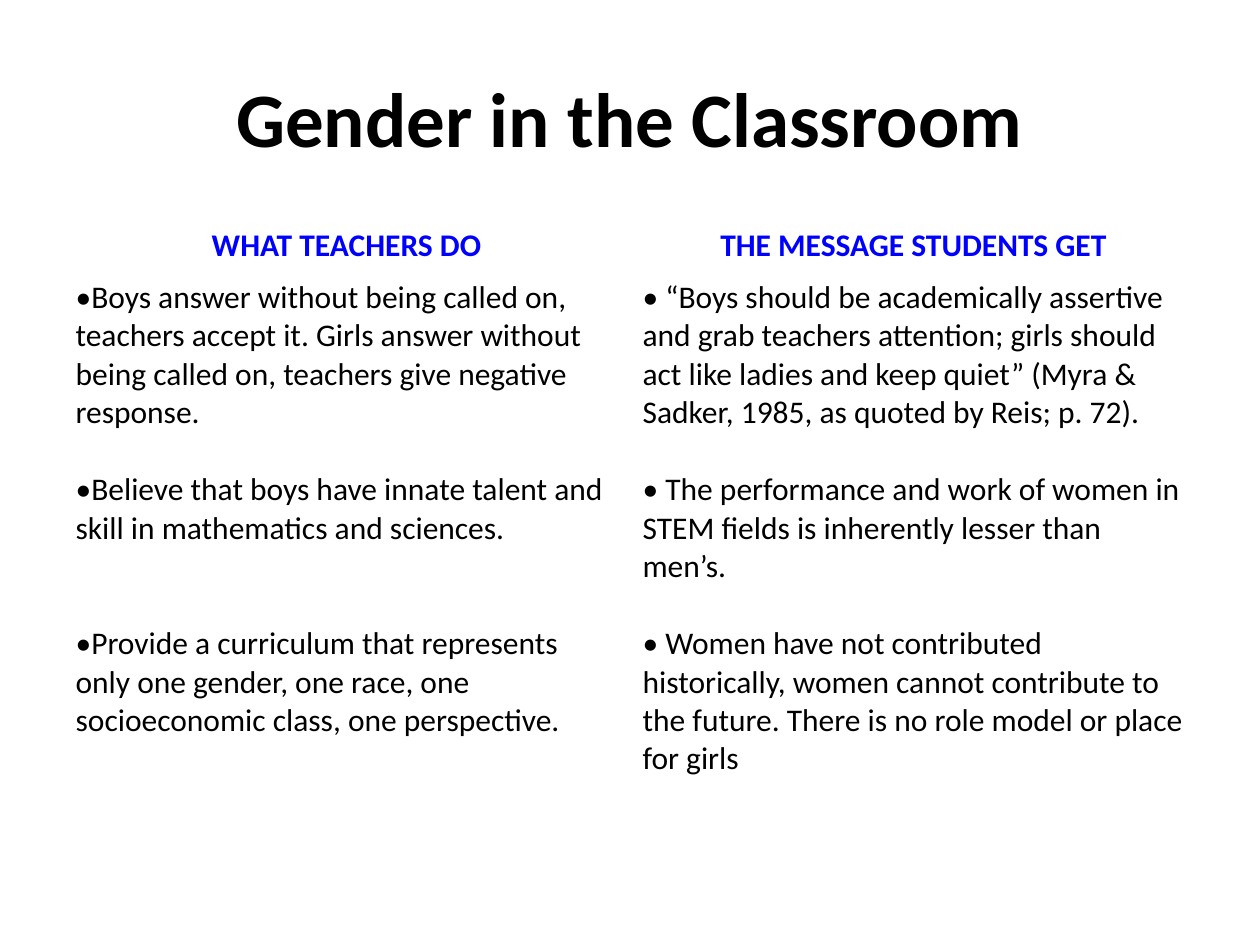
from pptx import Presentation
from pptx.dml.color import RGBColor
from pptx.enum.text import MSO_ANCHOR, PP_ALIGN
from pptx.util import Inches, Pt

LINE = 22  # height of one 18 pt line, in points

HEADINGS = ["WHAT TEACHERS DO", "THE MESSAGE STUDENTS GET"]

# Per column: (text, blank lines above)
POINTS = [
    [
        ("•Boys answer without being called on, teachers accept it. Girls answer "
         "without being called on, teachers give negative response.", 0),
        ("•Believe that boys have innate talent and skill in mathematics and "
         "sciences.", 1),
        ("•Provide a curriculum that represents only one gender, one race, one "
         "socioeconomic class, one perspective.", 2),
    ],
    [
        ("• “Boys should be academically assertive and grab teachers attention; "
         "girls should act like ladies and keep quiet” (Myra & Sadker, 1985, as "
         "quoted by Reis; p. 72).", 0),
        ("• The performance and work of women in STEM fields is inherently lesser "
         "than men’s.", 1),
        ("• Women have not contributed historically, women cannot contribute to "
         "the future. There is no role model or place for girls", 1),
    ],
]


def colour(hex_value):
    return RGBColor.from_string(hex_value)


class SlideBuilder:
    FORMATS = {
        "title": {"name": "Calibri", "size": Pt(44), "bold": True},
        "heading": {"name": "Calibri", "size": Pt(18), "bold": True},
        "point": {"name": "Calibri", "size": Pt(18), "bold": False},
    }
    COLOURS = {"title": "000000", "heading": "0000FF", "point": "000000"}

    def __init__(self, slide):
        self.slide = slide

    def paragraph(self, paragraph, text, style, align, lines_above=0):
        paragraph.text = text
        paragraph.alignment = align
        if lines_above:
            paragraph.space_before = Pt(lines_above * LINE)
        for attribute, value in self.FORMATS[style].items():
            setattr(paragraph.font, attribute, value)
        paragraph.font.color.rgb = colour(self.COLOURS[style])

    def title(self, text, left, top, width, height):
        frame = self.slide.shapes.add_textbox(
            Inches(left), Inches(top), Inches(width), Inches(height)).text_frame
        frame.word_wrap = True
        frame.vertical_anchor = MSO_ANCHOR.MIDDLE
        self.paragraph(frame.paragraphs[0], text, "title", PP_ALIGN.CENTER)

    def table(self, headings, points, left, top, width, row_heights):
        grid = self.slide.shapes.add_table(
            len(row_heights), len(headings), Inches(left), Inches(top),
            Inches(width), Inches(sum(row_heights))).table
        for row, height in zip(grid.rows, row_heights):
            row.height = Inches(height)
        for cell in grid.iter_cells():
            cell.fill.background()
        for column, (heading, items) in enumerate(zip(headings, points)):
            self.paragraph(grid.cell(0, column).text_frame.paragraphs[0],
                           heading, "heading", PP_ALIGN.CENTER)
            frame = grid.cell(1, column).text_frame
            for index, (text, lines_above) in enumerate(items):
                target = frame.add_paragraph() if index else frame.paragraphs[0]
                self.paragraph(target, text, "point", PP_ALIGN.LEFT, lines_above)


def main():
    deck = Presentation()
    deck.slide_width, deck.slide_height = Inches(10), Inches(7.5)
    builder = SlideBuilder(deck.slides.add_slide(deck.slide_layouts[6]))

    # Title
    builder.title("Gender in the Classroom", 0.5, 0.3, 9, 1.25)

    # Teacher behaviour against the message it sends
    builder.table(HEADINGS, POINTS, 0.5, 1.75, 9, [0.41, 4])

    deck.save("out.pptx")


if __name__ == "__main__":
    main()
